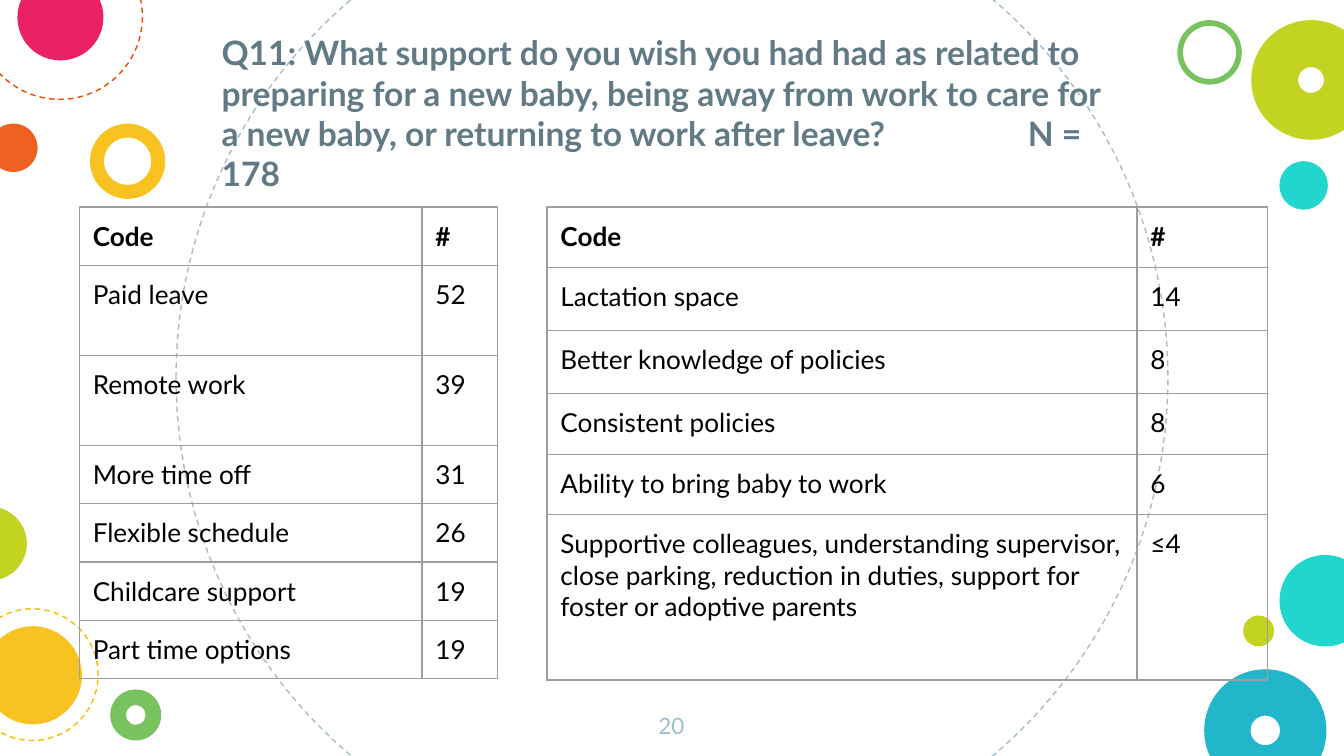
from lxml import etree
from pptx import Presentation
from pptx.dml.color import RGBColor
from pptx.enum.dml import MSO_LINE
from pptx.enum.shapes import MSO_SHAPE
from pptx.enum.text import MSO_ANCHOR, PP_ALIGN
from pptx.oxml.ns import qn
from pptx.util import Inches, Pt

ELLIPSE, DONUT = MSO_SHAPE.OVAL, MSO_SHAPE.DONUT
DASH = MSO_LINE.DASH
BOTTOM, TOP = MSO_ANCHOR.BOTTOM, MSO_ANCHOR.TOP
LEFT, CENTER = PP_ALIGN.LEFT, PP_ALIGN.CENTER

FONT = "Lato"
COLORS = {
    "title": "617A86", "pale": "A1BECC", "text": "000000", "border": "9E9E9E",
    "turquoise": "00D1C6", "yellow": "F8BB00", "teal": "00ACC3", "lime": "BBCD00",
    "orange": "ED4A00", "green": "65BB48", "pink": "E8004C",
}
DOT_ALPHA = 87

# left, top, diameter, color, ring thickness (None for a full dot)
DOTS = [
    (9.52, 4.13, 0.68, "turquoise", None),
    (0.67, 0.92, 0.56, "yellow", 0.186),
    (8.96, 4.98, 0.91, "teal", 0.379),
    (9.25, 4.58, 0.23, "lime", None),
    (8.76, 0.15, 0.48, "green", 0.088),
    (-0.08, 0.92, 0.36, "orange", None),
    (9.31, 0.15, 0.89, "lime", 0.392),
    (0.13, -0.19, 0.64, "pink", None),
    (0.82, 5.13, 0.38, "green", 0.306),
    (-0.12, 4.66, 0.73, "yellow", None),
    (-0.35, 3.77, 0.55, "lime", None),
    (9.52, 1.2, 0.36, "turquoise", None),
]
DASHED_CIRCLES = [
    (1.31, -0.88, 7.38, "pale"),
    (-0.17, -0.49, 1.23, "orange"),
    (-0.25, 4.53, 0.98, "yellow"),
]

QUESTION = (
    "Q11: What support do you wish you had had as related to preparing for a new baby, "
    "being away from work to care for a new baby, or returning to work after leave? \t\tN = 178"
)
HEADER = ("Code", "#")
TOP_CODES = [
    HEADER, ("Paid leave", "52"), ("Remote work", "39"), ("More time off", "31"),
    ("Flexible schedule", "26"), ("Childcare support", "19"), ("Part time options", "19"),
]
OTHER_CODES = [
    HEADER, ("Lactation space", "14"), ("Better knowledge of policies", "8"),
    ("Consistent policies", "8"), ("Ability to bring baby to work", "6"),
    ("Supportive colleagues, understanding supervisor, close parking, reduction in duties, "
     "support for foster or adoptive parents", "≤4"),
]


def rgb(name):
    return RGBColor.from_string(COLORS[name])


def style_font(font, size, color, bold=False):
    font.name, font.size, font.bold = FONT, Pt(size), bold
    font.color.rgb = rgb(color)


def add_circle(slide, preset, left, top, diameter):
    circle = slide.shapes.add_shape(
        preset, Inches(left), Inches(top), Inches(diameter), Inches(diameter))
    circle.shadow.inherit = False
    return circle


def add_dot(slide, left, top, diameter, color, ring):
    dot = add_circle(slide, DONUT if ring else ELLIPSE, left, top, diameter)
    if ring:
        dot.adjustments[0] = ring
    dot.fill.solid()
    dot.fill.fore_color.rgb = rgb(color)
    solid = dot.fill._xPr.find(qn("a:solidFill"))
    etree.SubElement(solid[0], qn("a:alpha"), val=str(DOT_ALPHA * 1000))
    dot.line.fill.background()


def add_dashed_circle(slide, left, top, diameter, color):
    circle = add_circle(slide, ELLIPSE, left, top, diameter)
    circle.fill.background()
    circle.line.color.rgb = rgb(color)
    circle.line.width = Pt(0.75)
    circle.line.dash_style = DASH


def add_decoration(slide):
    for circle in DASHED_CIRCLES:
        add_dashed_circle(slide, *circle)
    for dot in DOTS:
        add_dot(slide, *dot)


def add_text(slide, box, text, size, color, bold=False, align=LEFT, anchor=TOP):
    """Add a wrapped text box with tab stops one inch apart."""
    frame = slide.shapes.add_textbox(*map(Inches, box)).text_frame
    frame.word_wrap = True
    frame.vertical_anchor = anchor
    frame.margin_left = frame.margin_right = Inches(0.1)
    frame.margin_top = frame.margin_bottom = Inches(0.1)
    paragraph = frame.paragraphs[0]
    paragraph.text = text
    paragraph.alignment = align
    paragraph._p.get_or_add_pPr().set("defTabSz", str(Inches(1)))
    style_font(paragraph.font, size, color, bold)


def style_cell(cell):
    """Give the cell thin grey borders, even margins and no fill."""
    properties = cell._tc.get_or_add_tcPr()
    for side in ("lnL", "lnR", "lnT", "lnB"):
        border = etree.SubElement(properties, qn(f"a:{side}"), w=str(Pt(0.75)))
        solid = etree.SubElement(border, qn("a:solidFill"))
        etree.SubElement(solid, qn("a:srgbClr"), val=COLORS["border"])
    cell.fill.background()
    cell.margin_left = cell.margin_right = Inches(0.1)
    cell.margin_top = cell.margin_bottom = Inches(0.1)


def add_code_table(slide, box, column_widths, row_heights, codes):
    """Fill one row per code; the last code spans any rows left over."""
    table = slide.shapes.add_table(
        len(row_heights), len(column_widths), *map(Inches, box)).table
    table.first_row = table.horz_banding = False
    for column, width in zip(table.columns, column_widths):
        column.width = Inches(width)
    for row, height in zip(table.rows, row_heights):
        row.height = Inches(height)
    for cell in table.iter_cells():
        style_cell(cell)
        style_font(cell.text_frame.paragraphs[0].font, 14, "text")
    for r, code in enumerate(codes):
        for c, text in enumerate(code):
            paragraph = table.cell(r, c).text_frame.paragraphs[0]
            paragraph.text = text
            paragraph.font.bold = r == 0
    last_code, last_row = len(codes) - 1, len(row_heights) - 1
    if last_code < last_row:
        for c in range(len(column_widths)):
            table.cell(last_code, c).merge(table.cell(last_row, c))


def main():
    deck = Presentation()
    deck.slide_width = Inches(10)
    deck.slide_height = deck.slide_width * 9 // 16
    slide = deck.slides.add_slide(deck.slide_layouts[6])
    add_decoration(slide)
    add_text(slide, (1.55, 0.14, 6.75, 1.4), QUESTION, 18, "title", bold=True, anchor=BOTTOM)
    add_text(slide, (4.74, 5.2, 0.51, 0.43), "20", 12, "pale", align=CENTER)
    add_code_table(slide, (0.59, 1.54, 3.12, 3.5), (2.55, 0.56),
                   (0.43, 0.67, 0.67, 0.43, 0.43, 0.42, 0.42), TOP_CODES)
    add_code_table(slide, (4.07, 1.54, 5.36, 3.5), (4.39, 0.97),
                   (0.45, 0.47, 0.47, 0.45, 0.45, 0.29, 0.94), OTHER_CODES)
    deck.save("out.pptx")


if __name__ == "__main__":
    main()
